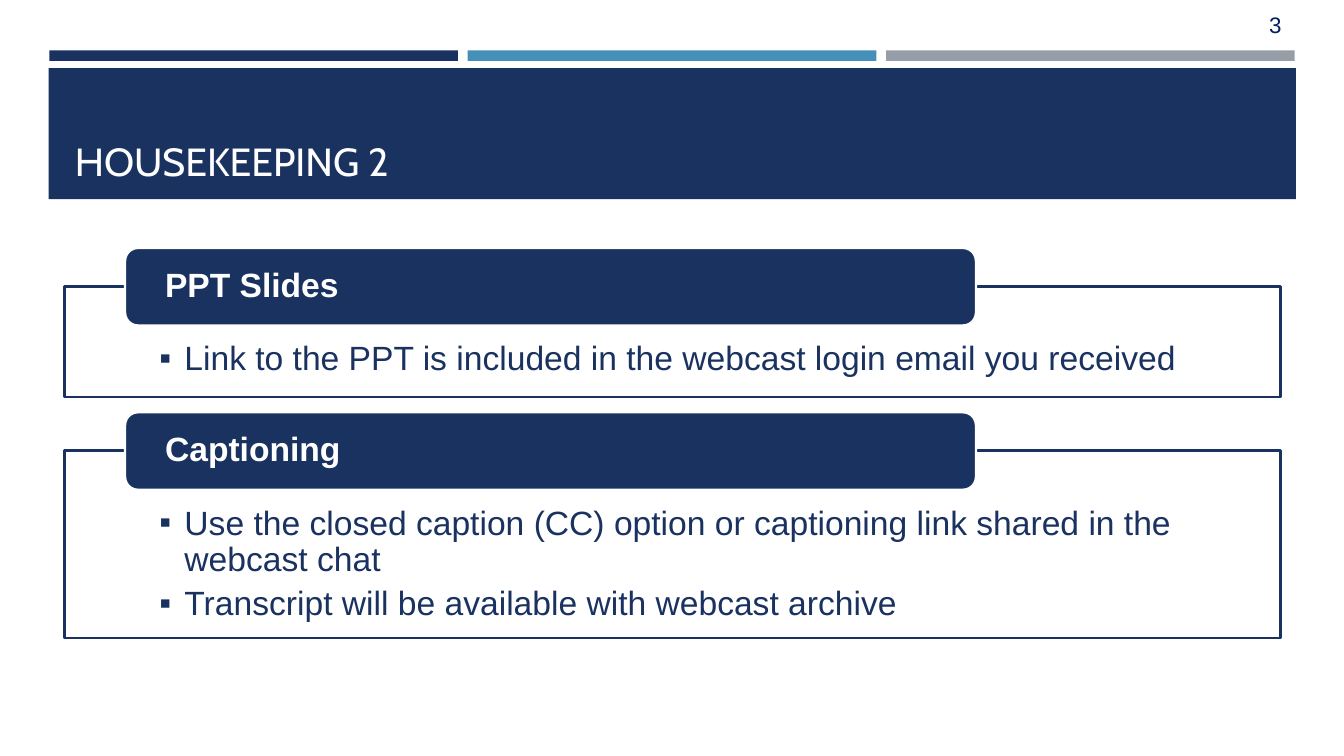
from dataclasses import dataclass

import lxml.etree
import pptx
import pptx.dml.color
import pptx.enum.shapes
import pptx.enum.text
import pptx.oxml.ns
import pptx.util

WIDTH, HEIGHT = pptx.util.Inches(13.33), pptx.util.Inches(7.5)
NAVY, BLUE, GREY, WHITE = "1A3260", "4590B8", "969FA7", "FFFFFF"
ALIGN = pptx.enum.text.PP_ALIGN
ANCHOR = pptx.enum.text.MSO_ANCHOR
SHAPE = pptx.enum.shapes.MSO_SHAPE


@dataclass(frozen=True)
class Box:
    """A place on a grid of 100 columns by 100 rows."""
    left: float
    top: float
    width: float
    height: float


@dataclass(frozen=True)
class Panel:
    head: str
    items: tuple[str, ...]
    top: float
    height: float


@dataclass(frozen=True)
class Style:
    size: float
    color: str
    font: str = "Arial"
    bold: bool = False
    align: ALIGN = ALIGN.LEFT
    spacing: float = 0.9
    after: float = 0


PANELS = (
    Panel("PPT Slides",
          ("Link to the PPT is included in the webcast login email you received",),
          37.87, 14.67),
    Panel("Captioning",
          ("Use the closed caption (CC) option or captioning link shared in the webcast chat",
           "Transcript will be available with webcast archive"),
          59.6, 24.8),
)


def cols(count: float) -> int:
    return round(WIDTH * count / 100)


def rows(count: float) -> int:
    return round(HEIGHT * count / 100)


def paint(fill, color: str) -> None:
    fill.solid()
    fill.fore_color.rgb = pptx.dml.color.RGBColor.from_string(color)


def place(shape, box: Box) -> None:
    shape.left, shape.top = cols(box.left), rows(box.top)
    shape.width, shape.height = cols(box.width), rows(box.height)


def edge(shape, color: str) -> None:
    paint(shape.line.fill, color)
    shape.line.width = pptx.util.Pt(1.75)


def block(slide, kind: SHAPE, box: Box, color: str):
    """Add a filled shape with no line or shadow."""
    shape = slide.shapes.add_shape(kind, 0, 0, 0, 0)
    place(shape, box)
    shape.shadow.inherit = False
    paint(shape.fill, color)
    shape.line.fill.background()
    return shape


def inset(frame, side: float, top: float, base: float, anchor: ANCHOR) -> None:
    """Set the margins in grid units, and the anchor."""
    frame.word_wrap = True
    frame.auto_size = pptx.enum.text.MSO_AUTO_SIZE.NONE
    frame.margin_left = frame.margin_right = cols(side)
    frame.margin_top, frame.margin_bottom = rows(top), rows(base)
    frame.vertical_anchor = anchor


def bullet(para) -> None:
    props = para._p.get_or_add_pPr()
    indent = pptx.util.Inches(0.25)
    props.set("marL", str(indent))
    props.set("indent", str(-indent))
    mark = lxml.etree.SubElement(props, pptx.oxml.ns.qn("a:buChar"))
    mark.set("char", "▪")


def write(frame, lines: tuple[str, ...], style: Style, listed: bool = False) -> None:
    frame.text = "\n".join(lines)
    for para in frame.paragraphs:
        if listed:
            bullet(para)
        para.alignment = style.align
        para.line_spacing = style.spacing
        para.space_before = pptx.util.Pt(0)
        para.space_after = pptx.util.Pt(style.after)
        para.font.name = style.font
        para.font.size = pptx.util.Pt(style.size)
        para.font.bold = style.bold
        paint(para.font.fill, style.color)


def draw_panel(slide, body, panel: Panel) -> None:
    place(body, Box(4.8, panel.top, 90.47, panel.height))
    paint(body.fill, WHITE)
    edge(body, NAVY)
    inset(body.text_frame, 7.05, 7.33, 2.53, ANCHOR.TOP)
    write(body.text_frame, panel.items, Style(24, NAVY, after=6), listed=True)

    tab = block(slide, SHAPE.ROUNDED_RECTANGLE,
                Box(9.3, panel.top - 5.07, 63.32, 10.27), NAVY)
    edge(tab, WHITE)
    inset(tab.text_frame, 2.7, 0, 0, ANCHOR.MIDDLE)
    write(tab.text_frame, (panel.head,), Style(24, WHITE, bold=True))


def main() -> None:
    deck = pptx.Presentation()
    deck.slide_width, deck.slide_height = WIDTH, HEIGHT
    slide = deck.slides.add_slide(deck.slide_layouts[3])
    title, *bodies = slide.placeholders

    for step, color in enumerate((NAVY, BLUE, GREY)):
        block(slide, SHAPE.RECTANGLE, Box(3.67 + 31.13 * step, 6.67, 30.4, 1.4), color)

    place(title, Box(3.62, 9, 92.8, 17.33))
    paint(title.fill, NAVY)
    inset(title.text_frame, 1.95, 2, 1.9, ANCHOR.BOTTOM)
    write(title.text_frame, ("HOUSEKEEPING 2",), Style(28, "FFFEFF", "Cabin", spacing=1))

    page = slide.shapes.add_textbox(0, 0, 0, 0)
    place(page, Box(87.47, 0.8, 8.63, 5.33))
    inset(page.text_frame, 0.75, 0.67, 0.67, ANCHOR.MIDDLE)
    write(page.text_frame, ("3",), Style(16, "002060", align=ALIGN.RIGHT, after=6))

    for body, panel in zip(bodies, PANELS):
        draw_panel(slide, body, panel)

    deck.save("out.pptx")


if __name__ == "__main__":
    main()
